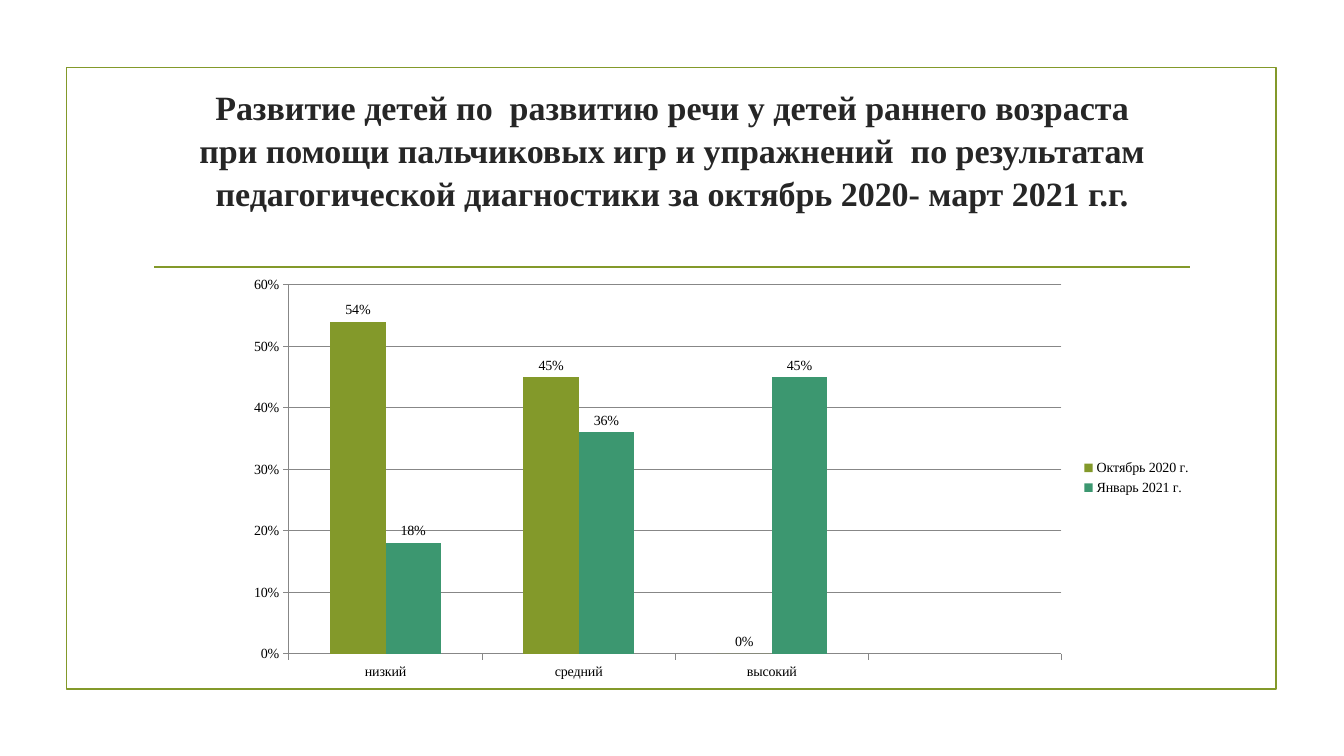
from lxml.etree import SubElement
from pptx import Presentation
from pptx.chart.data import CategoryChartData
from pptx.dml.color import RGBColor
from pptx.enum.chart import XL_CHART_TYPE, XL_LEGEND_POSITION, XL_TICK_MARK
from pptx.enum.shapes import MSO_CONNECTOR, MSO_SHAPE
from pptx.enum.text import MSO_ANCHOR, MSO_AUTO_SIZE, PP_ALIGN
from pptx.oxml import parse_xml
from pptx.oxml.ns import nsdecls, qn
from pptx.util import Pt

FONT = "Times New Roman"
OLIVE, GREEN, GREY = "83992A", "3C9770", "878787"
TITLE = (
    "Развитие детей по  развитию речи у детей раннего возраста\v"
    "при помощи пальчиковых игр и упражнений  по результатам "
    "педагогической диагностики за октябрь 2020- март 2021 г.г."
)
LEVELS = ["низкий", "средний", "высокий", ""]
PERIODS = [
    ("Октябрь 2020 г.", OLIVE, [0.54, 0.45, 0, None]),
    ("Январь 2021 г.", GREEN, [0.18, 0.36, 0.45, None]),
]


def color(value):
    return RGBColor.from_string(value)


def style_font(font, size, hex_color, bold=False):
    font.name = FONT
    font.size = Pt(size)
    font.bold = bold
    font.color.rgb = color(hex_color)


def add_frame(slide, left, top, width, height):
    frame = slide.shapes.add_shape(
        MSO_SHAPE.RECTANGLE, Pt(left), Pt(top), Pt(width), Pt(height))
    frame.shadow.inherit = False
    frame.fill.background()
    frame.line.color.rgb = color(OLIVE)
    frame.line.width = Pt(1.25)

    rule_left, rule_top, rule_width = left + 62.6, top + 142.6, 740.2
    rule = slide.shapes.add_connector(
        MSO_CONNECTOR.STRAIGHT, Pt(rule_left), Pt(rule_top),
        Pt(rule_left + rule_width), Pt(rule_top))
    rule.line.color.rgb = color(OLIVE)
    rule.line.width = Pt(1.25)
    SubElement(rule._element.spPr, qn("a:effectLst"))


def add_title(slide, left, top, width, height):
    title = slide.shapes.title
    title.left, title.top = Pt(left), Pt(top)
    title.width, title.height = Pt(width), Pt(height)
    frame = title.text_frame
    frame.text = TITLE
    frame.word_wrap = True
    frame.auto_size = MSO_AUTO_SIZE.NONE
    frame.vertical_anchor = MSO_ANCHOR.MIDDLE
    frame.margin_top, frame.margin_bottom = Pt(0), Pt(44)
    heading = frame.paragraphs[0]
    heading.alignment = PP_ALIGN.CENTER
    heading.line_spacing = 1.05
    style_font(heading.font, 24.3, "262626", bold=True)


def set_plot_layout(chart, **fractions):
    values = "".join(
        f'<c:{key} val="{value}"/>' for key, value in fractions.items())
    plot_area = chart._chartSpace.chart.plotArea
    for layout in plot_area.findall(qn("c:layout")):
        plot_area.remove(layout)
    plot_area.insert(0, parse_xml(
        f'<c:layout {nsdecls("c")}><c:manualLayout>'
        '<c:layoutTarget val="inner"/><c:xMode val="edge"/>'
        f'<c:yMode val="edge"/>{values}</c:manualLayout></c:layout>'))


def add_results_chart(slide, left, top, width, height):
    results = CategoryChartData(number_format="0%")
    results.categories = LEVELS
    for period, _, shares in PERIODS:
        results.add_series(period, shares)
    chart = slide.shapes.add_chart(
        XL_CHART_TYPE.COLUMN_CLUSTERED, Pt(left), Pt(top),
        Pt(width), Pt(height), results).chart
    style_font(chart.font, 10, "000000")
    chart.has_title = False
    chart.has_legend = True
    chart.legend.position = XL_LEGEND_POSITION.RIGHT
    chart.legend.include_in_layout = False
    set_plot_layout(chart, x=0.055, y=0.04, w=0.8, h=0.88)

    plot = chart.plots[0]
    plot.gap_width, plot.overlap = 150, 0
    plot.vary_by_categories = False
    for series, (_, fill, _) in zip(plot.series, PERIODS):
        series.format.fill.solid()
        series.format.fill.fore_color.rgb = color(fill)
        series.invert_if_negative = False
        series.data_labels.show_value = True
        series.data_labels.number_format = "0%"
        series.data_labels.number_format_is_linked = False

    shares_axis = chart.value_axis
    shares_axis.minimum_scale, shares_axis.maximum_scale = 0, 0.6
    shares_axis.major_unit = 0.1
    shares_axis.tick_labels.number_format = "0%"
    shares_axis.tick_labels.number_format_is_linked = False
    shares_axis.has_major_gridlines = True
    shares_axis.major_gridlines.format.line.color.rgb = color(GREY)
    for axis in (chart.category_axis, shares_axis):
        axis.major_tick_mark = XL_TICK_MARK.OUTSIDE
        axis.format.line.color.rgb = color(GREY)


def main():
    presentation = Presentation()
    presentation.slide_width, presentation.slide_height = Pt(960), Pt(540)
    slide = presentation.slides.add_slide(presentation.slide_layouts[5])
    add_frame(slide, 47.5, 48.2, 864, 444.2)
    add_title(slide, 102.2, 77, 756, 103)
    add_results_chart(slide, 168.5, 191.5, 689.8, 299.5)
    presentation.save("out.pptx")


if __name__ == "__main__":
    main()
